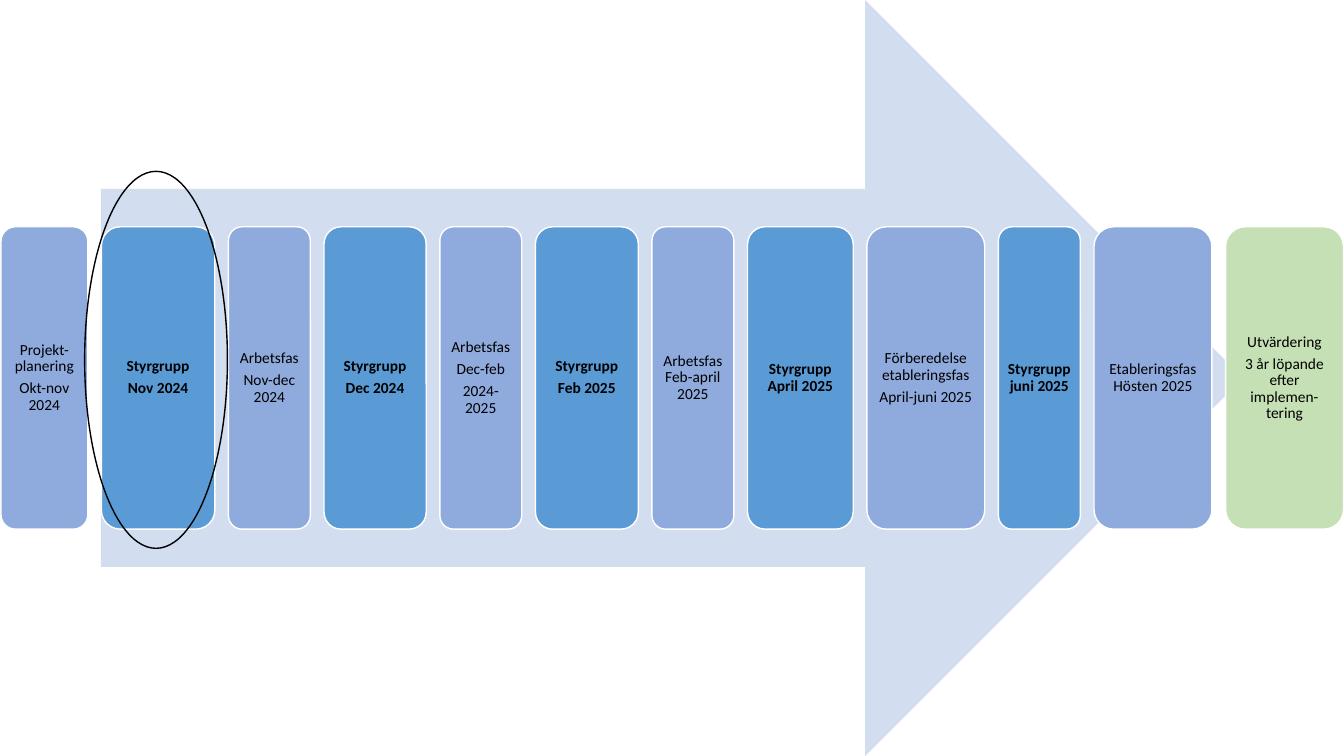
from pptx import Presentation
from pptx.dml.color import RGBColor
from pptx.enum.shapes import MSO_SHAPE
from pptx.enum.text import MSO_ANCHOR, PP_ALIGN
from pptx.util import Pt

ARROW = MSO_SHAPE.RIGHT_ARROW
ROUNDED = MSO_SHAPE.ROUNDED_RECTANGLE
OVAL = MSO_SHAPE.OVAL
MIDDLE = MSO_ANCHOR.MIDDLE
CENTER = PP_ALIGN.CENTER

COLORS = {
    "arrow": "D2DEEF",
    "work": "8FAADC",
    "board": "5B9BD5",
    "review": "C5E0B4",
    "white": "FFFFFF",
    "black": "000000",
}

SLIDE_WIDTH, SLIDE_HEIGHT = 960, 540
FIRST_LEFT, GAP = 0.7, 9.75
BOX_TOP, BOX_HEIGHT = 162, 216
INSET = 3.3

# Kind, width in points, paragraphs
PHASES = [
    ("work", 62, ["Projekt-planering", "Okt-nov 2024"]),
    ("board", 81, ["Styrgrupp", "Nov 2024"]),
    ("work", 58.5, ["Arbetsfas", "Nov-dec 2024"]),
    ("board", 73, ["Styrgrupp", "Dec 2024"]),
    ("work", 58.5, ["Arbetsfas", "Dec-feb", "2024-2025"]),
    ("board", 73.5, ["Styrgrupp", "Feb 2025"]),
    ("work", 58.5, ["Arbetsfas Feb-april 2025"]),
    ("board", 75.5, ["Styrgrupp April 2025"]),
    ("work", 84.25, ["Förberedelse etableringsfas", "April-juni 2025"]),
    ("board", 58.5, ["Styrgrupp juni 2025"]),
    ("work", 84.25, ["Etableringsfas Hösten 2025"]),
    ("review", 84.25, ["Utvärdering", "3 år löpande efter implemen-tering"]),
]


def rgb(name):
    return RGBColor.from_string(COLORS[name])


def add_shape(page, kind, left, top, width, height, fill=None, line=None):
    """Add a flat shape; without a fill or line colour that part is left out."""
    shape = page.shapes.add_shape(kind, Pt(left), Pt(top), Pt(width), Pt(height))
    shape.shadow.inherit = False
    if fill:
        shape.fill.solid()
        shape.fill.fore_color.rgb = rgb(fill)
    else:
        shape.fill.background()
    if line:
        shape.line.color.rgb = rgb(line)
        shape.line.width = Pt(1)
    else:
        shape.line.fill.background()
    return shape


def write_text(shape, lines, bold):
    frame = shape.text_frame
    frame.word_wrap = True
    frame.vertical_anchor = MIDDLE
    frame.margin_left = frame.margin_right = Pt(INSET)
    frame.margin_top = frame.margin_bottom = Pt(INSET)
    frame.text = "\n".join(lines)
    for para in frame.paragraphs:
        para.alignment = CENTER
        para.line_spacing = 0.9
        para.space_after = Pt(3.85)
        para.font.name = "Calibri"
        para.font.size = Pt(11)
        para.font.bold = bold
        para.font.color.rgb = rgb("black")


def add_phases(page):
    left = FIRST_LEFT
    for kind, width, lines in PHASES:
        box = add_shape(page, ROUNDED, left, BOX_TOP, width, BOX_HEIGHT, kind, "white")
        write_text(box, lines, bold=kind == "board")
        left += width + GAP


def main():
    deck = Presentation()
    deck.slide_width, deck.slide_height = Pt(SLIDE_WIDTH), Pt(SLIDE_HEIGHT)
    page = deck.slides.add_slide(deck.slide_layouts[6])
    add_shape(page, ARROW, 72, 0, 816, SLIDE_HEIGHT, fill="arrow")
    add_phases(page)
    add_shape(page, OVAL, 60.5, 122.4, 102, 269.3, line="black")
    deck.save("out.pptx")


if __name__ == "__main__":
    main()
